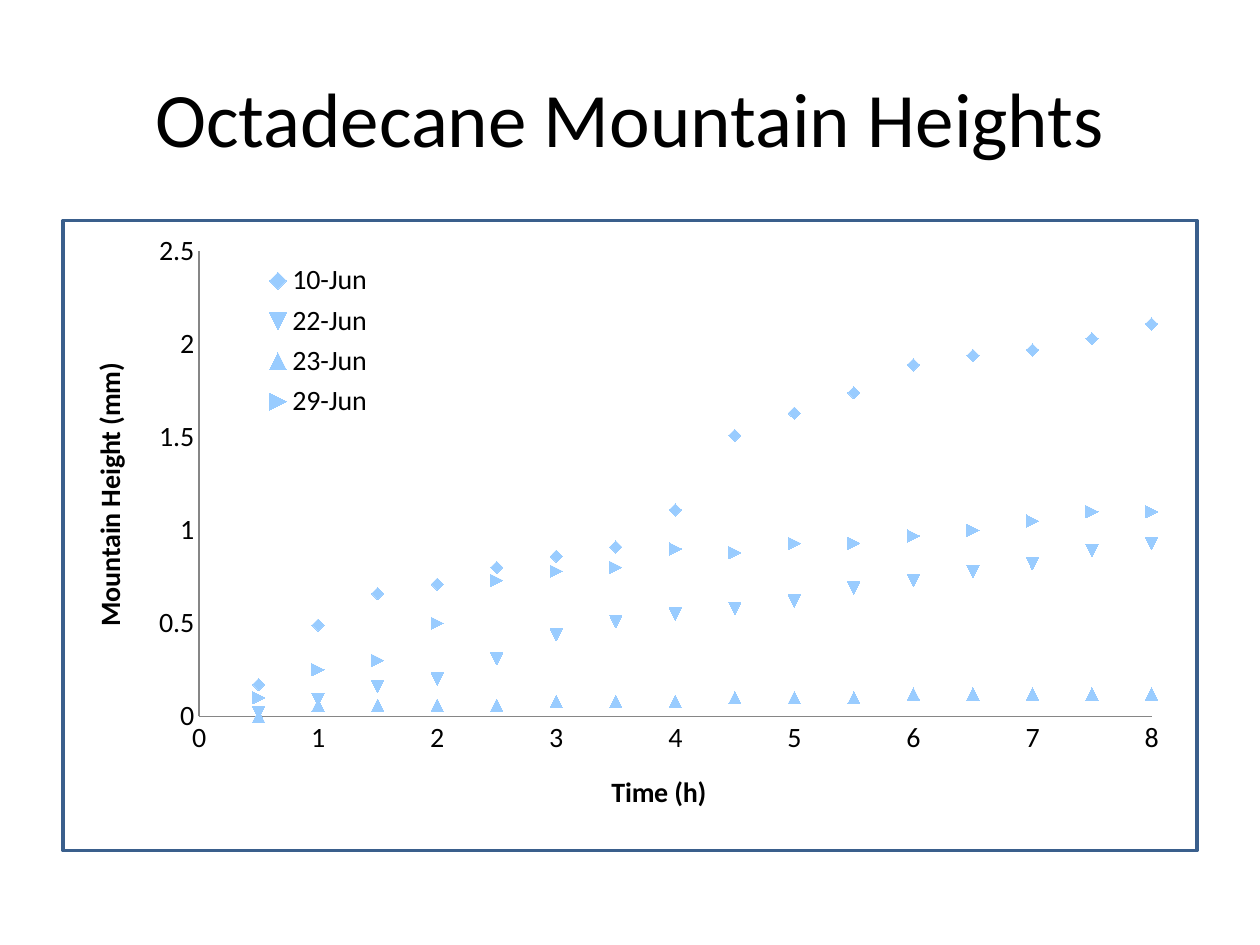
from lxml import etree
from pptx import Presentation
from pptx.chart.data import XyChartData
from pptx.dml.color import RGBColor
from pptx.enum.chart import XL_CHART_TYPE, XL_LEGEND_POSITION, XL_MARKER_STYLE, XL_TICK_MARK
from pptx.enum.shapes import MSO_SHAPE
from pptx.enum.text import MSO_ANCHOR, PP_ALIGN
from pptx.oxml.ns import qn
from pptx.util import Inches, Pt

SCATTER = XL_CHART_TYPE.XY_SCATTER
RIGHT = XL_LEGEND_POSITION.RIGHT
MARK = XL_MARKER_STYLE
NONE = XL_TICK_MARK.NONE
RECT = MSO_SHAPE.RECTANGLE
MIDDLE = MSO_ANCHOR.MIDDLE
CENTER = PP_ALIGN.CENTER

BLACK = RGBColor(0x00, 0x00, 0x00)
WHITE = RGBColor(0xFF, 0xFF, 0xFF)
FRAME = RGBColor(0x3A, 0x5F, 0x8C)
SKY = RGBColor(0x99, 0xCC, 0xFF)
GRAY = RGBColor(0x86, 0x86, 0x86)
FONT = "Calibri"

TITLE = "Octadecane Mountain Heights"
STEP = 0.5
SERIES = [
    ("10-Jun", MARK.DIAMOND, [0.17, 0.49, 0.66, 0.71, 0.8, 0.86, 0.91, 1.11,
                              1.51, 1.63, 1.74, 1.89, 1.94, 1.97, 2.03, 2.11]),
    ("22-Jun", MARK.AUTOMATIC, [0.02, 0.09, 0.16, 0.2, 0.31, 0.44, 0.51, 0.55,
                                0.58, 0.62, 0.69, 0.73, 0.78, 0.82, 0.89, 0.93]),
    ("23-Jun", MARK.TRIANGLE, [0, 0.06, 0.06, 0.06, 0.06, 0.08, 0.08, 0.08,
                               0.1, 0.1, 0.1, 0.12, 0.12, 0.12, 0.12, 0.12]),
    ("29-Jun", MARK.DOT, [0.1, 0.25, 0.3, 0.5, 0.73, 0.78, 0.8, 0.9,
                          0.88, 0.93, 0.93, 0.97, 1, 1.05, 1.1, 1.1]),
]
AXES = [("category_axis", "Time (h)", 8, 1),
        ("value_axis", "Mountain Height (mm)", 2.5, 0.5)]
PLOT = (0.12, 0.05, 0.84, 0.75)
KEY = (0.16, 0.06, 0.13, 0.27)

WIDE, HIGH = Inches(10), Inches(7.5)
LEFT, SPAN = int(WIDE * 0.05), int(WIDE * 0.9)
TOP = Inches(1.75)


def style(font, size, bold=False):
    font.name = FONT
    font.size = Pt(size)
    font.bold = bold
    font.color.rgb = BLACK


def place(node, spot, box, inner=False):
    for old in node.findall(qn("c:layout")):
        node.remove(old)
    layout = etree.Element(qn("c:layout"))
    manual = etree.SubElement(layout, qn("c:manualLayout"))
    parts = [("layoutTarget", "inner")] if inner else []
    parts += [("xMode", "edge"), ("yMode", "edge")]
    parts += zip("xywh", box)
    for tag, val in parts:
        etree.SubElement(manual, qn("c:" + tag)).set("val", str(val))
    node.insert(spot, layout)


def add_title(slide):
    title = slide.shapes.title
    title.left, title.top = LEFT, Inches(0.3)
    title.width, title.height = SPAN, Inches(1.25)
    title.text_frame.vertical_anchor = MIDDLE
    para = title.text_frame.paragraphs[0]
    para.alignment = CENTER
    run = para.add_run()
    run.text = TITLE
    style(run.font, 44)


def add_frame(slide):
    frame = slide.shapes.add_shape(RECT, LEFT, TOP, SPAN, Inches(5))
    frame.shadow.inherit = False
    frame.fill.solid()
    frame.fill.fore_color.rgb = WHITE
    frame.line.color.rgb = FRAME
    frame.line.width = Pt(2)


def add_plot(slide):
    data = XyChartData()
    for name, mark, vals in SERIES:
        row = data.add_series(name)
        for i, val in enumerate(vals, 1):
            row.add_data_point(i * STEP, val)
    chart = slide.shapes.add_chart(SCATTER, LEFT, TOP, SPAN, Inches(4.92), data).chart
    style(chart.font, 10)
    chart.has_title = False
    chart.plots[0].vary_by_categories = False

    for row, (name, mark, vals) in zip(chart.plots[0].series, SERIES):
        row.format.line.fill.background()
        row.marker.style = mark
        row.marker.size = 7
        row.marker.format.fill.solid()
        row.marker.format.fill.fore_color.rgb = SKY
        row.marker.format.line.fill.background()

    for kind, text, top, unit in AXES:
        axis = getattr(chart, kind)
        axis.minimum_scale, axis.maximum_scale = 0, top
        axis.major_unit = unit
        axis.has_major_gridlines = False
        axis.major_tick_mark = axis.minor_tick_mark = NONE
        axis.tick_labels.number_format = "General"
        axis.tick_labels.number_format_is_linked = False
        style(axis.tick_labels.font, 16)
        axis.format.line.color.rgb = GRAY
        axis.format.line.width = Pt(0.75)
        run = axis.axis_title.text_frame.paragraphs[0].add_run()
        run.text = text
        style(run.font, 16, True)

    chart.has_legend = True
    chart.legend.position = RIGHT
    chart.legend.include_in_layout = False
    style(chart.legend.font, 16)
    area = chart.plots[0]._element.getparent()
    place(area, 0, PLOT, True)
    place(chart.legend._element, 1, KEY)


def main():
    deck = Presentation()
    deck.slide_width, deck.slide_height = WIDE, HIGH
    slide = deck.slides.add_slide(deck.slide_layouts[5])
    add_title(slide)
    add_frame(slide)
    add_plot(slide)
    deck.save("out.pptx")


if __name__ == "__main__":
    main()
